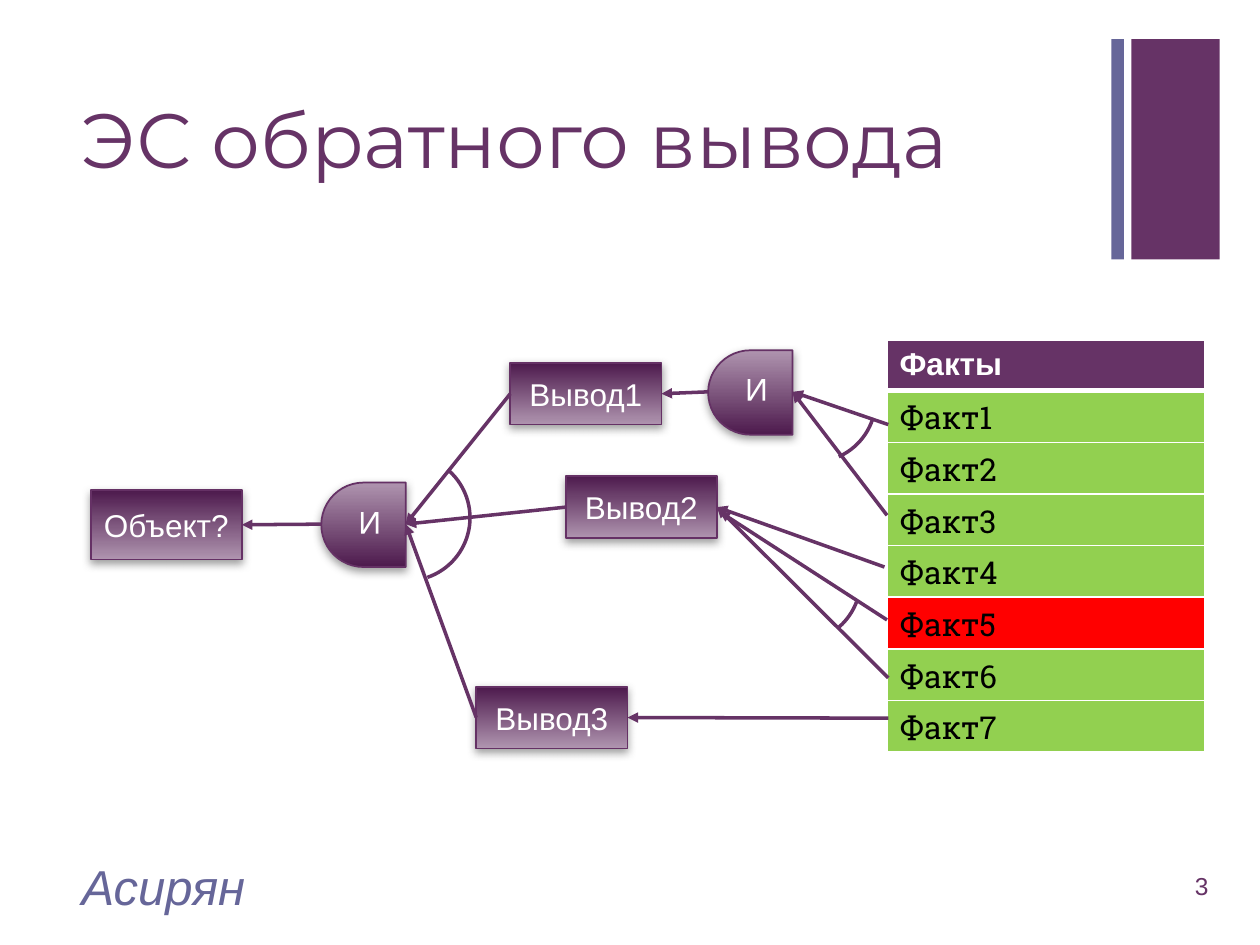
import lxml.etree
import pptx
import pptx.dml.color
import pptx.enum.shapes
import pptx.enum.text
import pptx.oxml.ns
import pptx.util

Inches = pptx.util.Inches
Pt = pptx.util.Pt
KIND = pptx.enum.shapes.MSO_SHAPE
ALIGN = pptx.enum.text.PP_ALIGN
MIDDLE = pptx.enum.text.MSO_ANCHOR.MIDDLE
LEFT, RIGHT = 1, 3
PLUM, SLATE, WHITE = "663366", "666699", "FFFFFF"


def color(code):
    """Turn a hex string into a colour."""
    return pptx.dml.color.RGBColor.from_string(code)


def node(parent, tag, **attrs):
    """Append a drawing element to its parent."""
    name = pptx.oxml.ns.qn("a:" + tag)
    return lxml.etree.SubElement(parent, name, attrs)


def write(par, text, size, code, font="Arial", bold=False, italic=False):
    """Add one run to a paragraph."""
    run = par.add_run()
    run.text = text
    run.font.size = Pt(size)
    run.font.name = font
    run.font.bold = bold
    run.font.italic = italic
    run.font.color.rgb = color(code)


def label(slide, box, text, size, code, align=ALIGN.LEFT, space=None, **style):
    """Place a text box centred vertically in its box."""
    frame = slide.shapes.add_textbox(*map(Inches, box)).text_frame
    frame.word_wrap = True
    frame.vertical_anchor = MIDDLE
    par = frame.paragraphs[0]
    par.alignment = align
    par.line_spacing = space
    write(par, text, size, code, **style)


def shape(slide, kind, box):
    """Add a preset shape without a shadow."""
    item = slide.shapes.add_shape(kind, *map(Inches, box))
    item.shadow.inherit = False
    return item


def badge(slide, box):
    """Draw the narrow and wide corner bars."""
    x, y, w, h = box
    for left, width, code in ((x, 0.1, SLATE), (x + 0.16, w - 0.16, PLUM)):
        bar = shape(slide, KIND.RECTANGLE, (left, y, width, h))
        bar.fill.solid()
        bar.fill.fore_color.rgb = color(code)
        bar.line.fill.background()


def edge(cell, side, width):
    """Give one side of a cell a white border."""
    props = cell._tc.get_or_add_tcPr()
    line = node(props, side, w=str(Pt(width)))
    node(node(line, "solidFill"), "srgbClr", val=WHITE)


def facts(slide, box):
    """Build the table of facts."""
    rows = ["Факты"] + [f"Факт{i}" for i in range(1, 8)]
    table = slide.shapes.add_table(len(rows), 1, *map(Inches, box)).table
    for i, text in enumerate(rows):
        head = i == 0
        table.rows[i].height = Inches(0.37 if head else 0.41)
        cell = table.cell(i, 0)
        for side in ("lnL", "lnR", "lnT", "lnB"):
            thick = head and side == "lnB" or i == 1 and side == "lnT"
            edge(cell, side, 3 if thick else 1)
        cell.fill.solid()
        fill = PLUM if head else "FF0000" if text == "Факт5" else "92D050"
        cell.fill.fore_color.rgb = color(fill)
        par = cell.text_frame.paragraphs[0]
        if head:
            write(par, text, 18, WHITE, bold=True)
        else:
            write(par, text, 18, "000000", font="Roboto Slab")


def block(slide, box, text, kind=KIND.RECTANGLE):
    """Draw a shaded block with centred text."""
    item = shape(slide, kind, box)
    item.fill.gradient()
    item.fill.gradient_angle = 270
    for stop, place, code in zip(item.fill.gradient_stops, (0, 1), ("4D1A4D", "AF94AF")):
        stop.position = place
        stop.color.rgb = color(code)
    item.line.color.rgb = color("653165")
    item.line.width = Pt(1)
    effects = item._element.spPr.find(pptx.oxml.ns.qn("a:effectLst"))
    shade = node(effects, "outerShdw", blurRad=str(Pt(5)), dist=str(Pt(2)),
                 dir="5400000", rotWithShape="0")
    node(node(shade, "srgbClr", val="808080"), "alpha", val="75000")
    frame = item.text_frame
    frame.vertical_anchor = MIDDLE
    frame.paragraphs[0].alignment = ALIGN.CENTER
    write(frame.paragraphs[0], text, 18, WHITE)
    return item


def gate(slide, x, y):
    """Draw an AND gate that faces left."""
    item = block(slide, (x, y, 0.67, 0.67), "И", KIND.FLOWCHART_DELAY)
    item.rotation = 180
    item.text_frame._txBody.bodyPr.set("vert", "wordArtVert")


def stroke(item):
    """Style a line or an arc."""
    item.line.color.rgb = color(PLUM)
    item.line.width = Pt(2)


def link(slide, start, end):
    """Draw an arrow between points or (block, side) pairs."""
    joins = [hasattr(spot[0], "shape_id") for spot in (start, end)]
    spots = [(0, 0) if join else spot for join, spot in zip(joins, (start, end))]
    straight = pptx.enum.shapes.MSO_CONNECTOR.STRAIGHT
    line = slide.shapes.add_connector(straight, *map(Inches, spots[0] + spots[1]))
    if joins[0]:
        line.begin_connect(*start)
    if joins[1]:
        line.end_connect(*end)
    stroke(line)
    node(line.line._get_or_add_ln(), "tailEnd", type="triangle")
    node(line._element.spPr, "effectLst")


def arc(slide, x, y, turn, first, last):
    """Draw an arc across a group of arrows."""
    item = shape(slide, KIND.ARC, (x, y, 1, 1))
    item.adjustments[0] = first
    item.adjustments[1] = last
    item.rotation = turn
    item.fill.background()
    stroke(item)


def graph(slide, box):
    """Build the inference graph from the facts to the object."""
    x, y, w, h = box
    goal = block(slide, (x, y + 1.22, 1.2, 0.55), "Объект?")
    places = ((3.33, 0.21), (3.77, 1.11), (3.06, h - 0.49))
    ends = [block(slide, (x + dx, y + dy, 1.2, 0.49), f"Вывод{i}")
            for i, (dx, dy) in enumerate(places, 1)]
    for dx, dy in ((1.83, 1.16), (4.9, 0.11)):
        gate(slide, x + dx, y + dy)
    join = (x + 2.5, y + 1.49)
    for item in ends:
        link(slide, (item, LEFT), join)
    link(slide, (x + 1.83, y + 1.49), (goal, RIGHT))
    link(slide, (x + 4.9, y + 0.44), (ends[0], RIGHT))
    pair = (x + 5.57, y + 0.44)
    second = (ends[1], RIGHT)
    near = (x + 4.99, y + 1.39)
    for dx, dy, end in ((w, 0.7, pair), (w - 0.01, 1.42, pair),
                        (w - 0.03, 1.83, second), (w - 0.01, 2.25, near),
                        (w, 2.71, second), (w, 3.03, (ends[2], RIGHT))):
        link(slide, (x + dx, y + dy), end)
    arc(slide, x + 2.01, y + 0.94, 71.1, 145.07, 0)
    arc(slide, x + 5.23, y, 78.4, 179.55, 208.32)
    arc(slide, x + 5.11, y + 1.43, 78.4, 181.32, 198.46)


def main():
    """Build and save the slide."""
    deck = pptx.Presentation()
    deck.slide_width, deck.slide_height = Inches(10), Inches(7.5)
    slide = deck.slides.add_slide(deck.slide_layouts[6])
    badge(slide, (8.82, 0.31, 0.86, 1.75))
    label(slide, (0.55, 0.53, 8.26, 1.22), "ЭС обратного вывода", 44, PLUM,
          space=0.9, font="Montserrat")
    label(slide, (9.08, 6.83, 0.61, 0.4), "3", 14, PLUM, align=ALIGN.RIGHT)
    label(slide, (0.55, 6.83, 6.7, 0.4), "Асирян", 28, SLATE, italic=True)
    facts(slide, (7.04, 2.7, 2.52, 3.24))
    graph(slide, (0.72, 2.67, 6.33, 3.27))
    deck.save("out.pptx")


if __name__ == "__main__":
    main()
